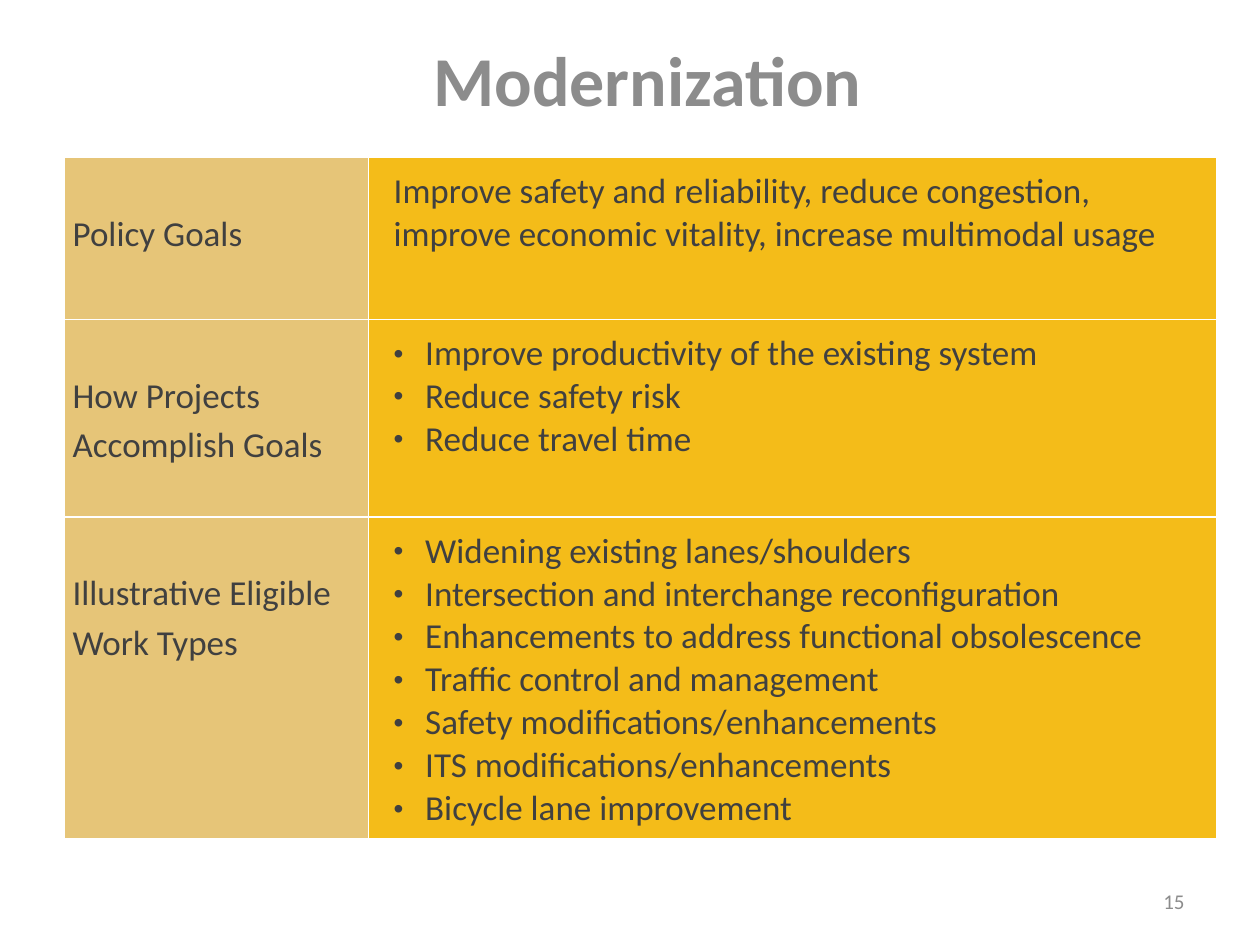
from lxml import etree
from pptx import Presentation
from pptx.dml.color import RGBColor
from pptx.enum.text import MSO_ANCHOR as Anchor, PP_ALIGN as Align
from pptx.oxml import parse_xml
from pptx.oxml.ns import nsdecls, qn
from pptx.util import Pt

GRAY, DARK, WHITE = "8C8C8C", "404040", "FFFFFF"
SAND, GOLD = "E6C578", "F4BC19"


def color(value):
    return RGBColor.from_string(value)


def style(paragraph, size, ink, bold=False):
    font = paragraph.font
    font.name, font.size, font.bold = "Calibri", Pt(size), bold
    font.color.rgb = color(ink)


prs = Presentation()
prs.slide_width, prs.slide_height = Pt(720), Pt(540)
slide = prs.slides.add_slide(prs.slide_layouts[6])

# Title and page number
for text, box, size, bold, align, anchor in (
    ("Modernization", (143.5, 17.5, 453, 124), 40, True, Align.CENTER, Anchor.TOP),
    ("15", (516, 500.5, 168, 28.75), 12, False, Align.RIGHT, Anchor.MIDDLE),
):
    frame = slide.shapes.add_textbox(*map(Pt, box)).text_frame
    frame.word_wrap = True
    frame.vertical_anchor = anchor
    line = frame.paragraphs[0]
    line.text, line.alignment = text, align
    style(line, size, GRAY, bold)

# Each row: height, topic, whether the details are bulleted, details
rows = [
    (92.5, "Policy Goals", False,
     ["Improve safety and reliability, reduce congestion,\v"
      "improve economic vitality, increase multimodal usage"]),
    (113, "How Projects Accomplish Goals", True,
     ["Improve productivity of the existing system",
      "Reduce safety risk",
      "Reduce travel time"]),
    (184, "Illustrative Eligible Work Types", True,
     ["Widening existing lanes/shoulders",
      "Intersection and interchange reconfiguration",
      "Enhancements to address functional obsolescence",
      "Traffic control and management",
      "Safety modifications/enhancements",
      "ITS modifications/enhancements",
      "Bicycle lane improvement"]),
]
goals = slide.shapes.add_table(
    len(rows), 2, Pt(36.5), Pt(90), Pt(659), Pt(389.5)).table
goals.columns[0].width, goals.columns[1].width = Pt(174), Pt(485)

for row, (height, topic, bulleted, details) in enumerate(rows):
    goals.rows[row].height = Pt(height)
    for column, (lines, fill, top) in enumerate(
            (([topic], SAND, 28), (details, GOLD, 7.3))):
        cell = goals.cell(row, column)
        cell.margin_left = cell.margin_right = Pt(5)
        cell.margin_top, cell.margin_bottom = Pt(top), Pt(0)
        for side in ("lnL", "lnR", "lnT", "lnB"):
            cell._tc.get_or_add_tcPr().append(parse_xml(
                f'<a:{side} {nsdecls("a")} w="12700"><a:solidFill>'
                f'<a:srgbClr val="{WHITE}"/></a:solidFill></a:{side}>'))
        cell.fill.solid()
        cell.fill.fore_color.rgb = color(fill)

        frame = cell.text_frame
        for index, text in enumerate(lines):
            line = frame.add_paragraph() if index else frame.paragraphs[0]
            line.text = text
            if column == 0:
                line.line_spacing = 1.15
            else:
                props = line._p.get_or_add_pPr()
                props.set("marL", str(Pt(27.5 if bulleted else 9.5)))
                if bulleted:
                    props.set("indent", str(Pt(-18)))
                    etree.SubElement(props, qn("a:buSzPct")).set("val", "80000")
                    etree.SubElement(props, qn("a:buFont")).set("typeface", "Arial")
                    etree.SubElement(props, qn("a:buChar")).set("char", "•")
            style(line, 20, DARK)

prs.save("out.pptx")
